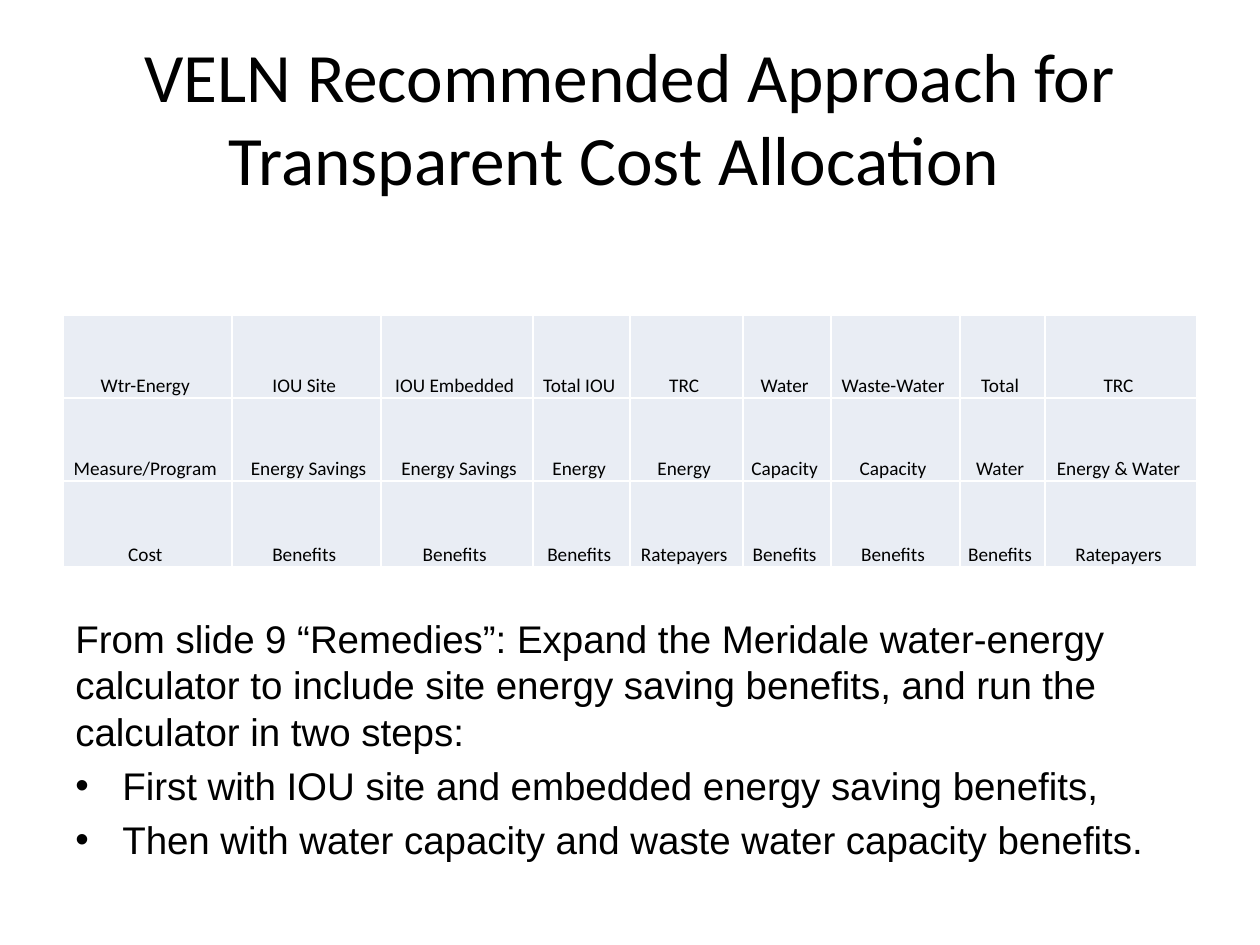
from lxml import etree
from pptx import Presentation
from pptx.dml.color import RGBColor
from pptx.enum.text import MSO_ANCHOR, PP_ALIGN
from pptx.oxml.ns import qn
from pptx.util import Emu, Pt

PX = 914400 // 126
CENTER = PP_ALIGN.CENTER
MIDDLE, BOTTOM = MSO_ANCHOR.MIDDLE, MSO_ANCHOR.BOTTOM
BLACK = RGBColor(0, 0, 0)
WHITE = RGBColor(255, 255, 255)
CELL_FILL = RGBColor(0xE9, 0xED, 0xF4)

TITLE = "VELN Recommended Approach for Transparent Cost Allocation  "
COST_ROWS = [
    ["Wtr-Energy ", "IOU Site ", "IOU Embedded ", "Total IOU ", "TRC ",
     "Water ", "Waste-Water ", "Total ", "TRC "],
    ["Measure/Program ", " Energy Savings", " Energy Savings", "Energy ", "Energy ",
     "Capacity ", "Capacity ", "Water ", "Energy & Water "],
    ["Cost ", "Benefits ", "Benefits ", "Benefits ", "Ratepayers ",
     "Benefits ", "Benefits ", "Benefits ", "Ratepayers "],
]
COLUMN_WIDTHS = [169, 149, 152, 97, 113, 88, 129, 85, 152]
ROW_HEIGHTS = [83, 83, 86]
INTRO = ("From slide 9 “Remedies”: Expand the Meridale water-energy calculator "
         "to include site energy saving benefits, and run the calculator in two steps:")
STEPS = [
    "First with IOU site and embedded energy saving benefits,",
    "Then with water capacity and waste water capacity benefits.",
]
LEFT, WIDTH = 63, 1134
TITLE_TOP, TITLE_HEIGHT = 37, 158
TABLE_TOP = 315
BODY_TOP, BODY_HEIGHT = 614, 250
STEP_INDENT = 47


def px(length):
    return Emu(length * PX)


def set_font(paragraph, name, size):
    paragraph.font.name = name
    paragraph.font.size = Pt(size)
    paragraph.font.color.rgb = BLACK


def add_text_frame(slide, top, height):
    frame = slide.shapes.add_textbox(px(LEFT), px(top), px(WIDTH), px(height)).text_frame
    frame.word_wrap = True
    return frame


def add_bullet(paragraph):
    """Add a hanging bullet; it must precede the default run font in the XML."""
    properties = paragraph._p.get_or_add_pPr()
    properties.set("marL", str(px(STEP_INDENT)))
    properties.set("indent", str(-px(STEP_INDENT)))
    etree.SubElement(properties, qn("a:buFont")).set("typeface", "Arial")
    etree.SubElement(properties, qn("a:buChar")).set("char", "•")
    properties.append(properties.find(qn("a:defRPr")))


def add_borders(cell):
    """Draw the four cell edges; they must precede the fill in the XML."""
    properties = cell._tc.get_or_add_tcPr()
    for position, side in enumerate(("a:lnL", "a:lnR", "a:lnT", "a:lnB")):
        line = etree.Element(qn(side), w=str(Pt(1)))
        fill = etree.SubElement(line, qn("a:solidFill"))
        etree.SubElement(fill, qn("a:srgbClr")).set("val", str(WHITE))
        properties.insert(position, line)


def add_title(slide):
    frame = add_text_frame(slide, TITLE_TOP, TITLE_HEIGHT)
    frame.vertical_anchor = MIDDLE
    title = frame.paragraphs[0]
    title.text = TITLE
    title.alignment = CENTER
    set_font(title, "Calibri", 39.6)


def add_cost_table(slide):
    table = slide.shapes.add_table(
        len(ROW_HEIGHTS), len(COLUMN_WIDTHS), px(LEFT), px(TABLE_TOP),
        px(WIDTH), px(sum(ROW_HEIGHTS))).table
    table.first_row = table.horz_banding = False
    for column, width in zip(table.columns, COLUMN_WIDTHS):
        column.width = px(width)
    for row, height, labels in zip(table.rows, ROW_HEIGHTS, COST_ROWS):
        row.height = px(height)
        for cell, label in zip(row.cells, labels):
            cell.margin_left = cell.margin_right = cell.margin_top = px(1)
            cell.margin_bottom = 0
            cell.vertical_anchor = BOTTOM
            cell.fill.solid()
            cell.fill.fore_color.rgb = CELL_FILL
            add_borders(cell)
            paragraph = cell.text_frame.paragraphs[0]
            paragraph.text = label
            paragraph.alignment = CENTER
            set_font(paragraph, "Calibri", 11)


def add_body(slide):
    frame = add_text_frame(slide, BODY_TOP, BODY_HEIGHT)
    frame.margin_top = 0
    frame.paragraphs[0].text = INTRO
    for step in STEPS:
        paragraph = frame.add_paragraph()
        paragraph.text = step
        paragraph.space_before = Pt(4)
    for paragraph in frame.paragraphs:
        paragraph.line_spacing = Pt(26.8)
        set_font(paragraph, "Arial", 22)
    for paragraph in frame.paragraphs[1:]:
        add_bullet(paragraph)


def main():
    presentation = Presentation()
    presentation.slide_width, presentation.slide_height = px(1260), px(945)
    slide = presentation.slides.add_slide(presentation.slide_layouts[6])
    add_title(slide)
    add_body(slide)
    add_cost_table(slide)
    presentation.save("out.pptx")


if __name__ == "__main__":
    main()
